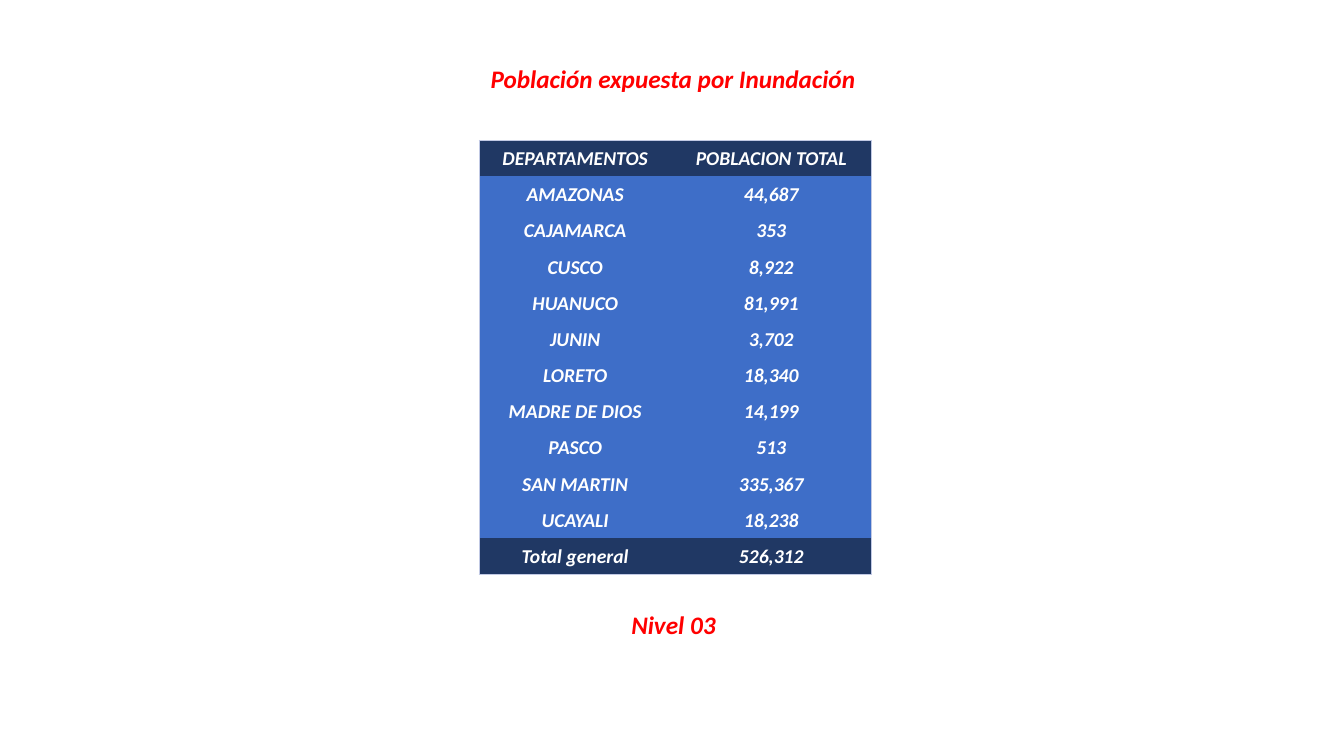
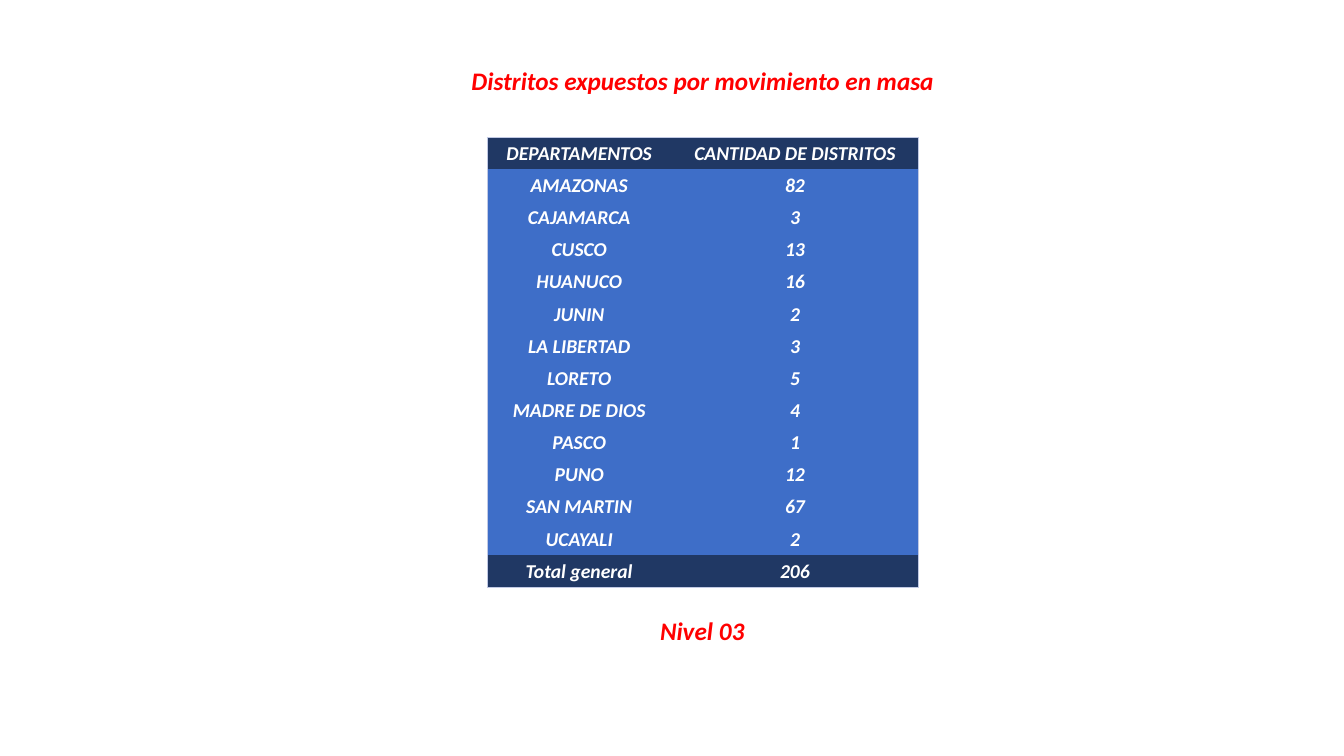
"""Builds two slides with exposure figures by department."""
from dataclasses import dataclass

from lxml import etree
from pptx import Presentation
from pptx.dml.color import RGBColor
from pptx.enum import text as txt
from pptx.oxml import ns
from pptx.util import Emu, Pt

EMU_PER_PX = 9144


@dataclass(frozen=True)
class Theme:
    font: str = "Calibri"
    heading: str = "FF0000"
    cell_text: str = "FFFFFF"
    band: str = "203864"
    body: str = "3E6EC8"
    border: str = "C1C9E4"
    heading_pt: int = 18
    cell_pt: int = 14
    border_pt: float = 0.5


@dataclass(frozen=True)
class Box:
    left: int
    top: int
    width: int
    height: int


@dataclass(frozen=True)
class Report:
    title: str
    title_box: Box
    level_box: Box
    table_top_left: tuple[int, int]
    column_widths: tuple[int, int]
    table_height: int
    measure: str
    departments: tuple[tuple[str, str], ...]
    total: str


THEME = Theme()
LEVEL = "Nivel 03"

REPORTS = (
    Report(
        "Población expuesta por Inundación",
        Box(475, 58, 385, 40), Box(613, 600, 110, 40),
        (475, 139), (191, 198), 431, "POBLACION TOTAL",
        (
            ("AMAZONAS", "44,687"), ("CAJAMARCA", "353"), ("CUSCO", "8,922"),
            ("HUANUCO", "81,991"), ("JUNIN", "3,702"), ("LORETO", "18,340"),
            ("MADRE DE DIOS", "14,199"), ("PASCO", "513"),
            ("SAN MARTIN", "335,367"), ("UCAYALI", "18,238"),
        ),
        "526,312",
    ),
    Report(
        "Distritos expuestos por movimiento en masa",
        Box(455, 60, 484, 40), Box(613, 606, 167, 40),
        (483, 136), (183, 245), 447, "CANTIDAD DE DISTRITOS",
        (
            ("AMAZONAS", "82"), ("CAJAMARCA", "3"), ("CUSCO", "13"),
            ("HUANUCO", "16"), ("JUNIN", "2"), ("LA LIBERTAD", "3"),
            ("LORETO", "5"), ("MADRE DE DIOS", "4"), ("PASCO", "1"),
            ("PUNO", "12"), ("SAN MARTIN", "67"), ("UCAYALI", "2"),
        ),
        "206",
    ),
)


def px(length: int) -> Emu:
    """Turn whole pixels into EMU."""
    return Emu(length * EMU_PER_PX)


def write(frame, wording: str, *, size: int, color: str) -> None:
    """Put one centred bold italic line into a text frame."""
    paragraph = frame.paragraphs[0]
    paragraph.alignment = txt.PP_ALIGN.CENTER
    run = paragraph.add_run()
    run.text = wording
    run.font.name = THEME.font
    run.font.size = Pt(size)
    run.font.bold = run.font.italic = True
    run.font.color.rgb = RGBColor.from_string(color)


def add_heading(slide, wording: str, box: Box, *, wrap: bool) -> None:
    """Add a red heading."""
    heading = slide.shapes.add_textbox(
        px(box.left), px(box.top), px(box.width), px(box.height))
    frame = heading.text_frame
    frame.word_wrap = wrap
    frame.auto_size = txt.MSO_AUTO_SIZE.SHAPE_TO_FIT_TEXT
    write(frame, wording, size=THEME.heading_pt, color=THEME.heading)


def set_borders(cell, outer: dict[str, bool]) -> None:
    """Draw the outer edges of a cell and clear its inner ones."""
    properties = cell._tc.get_or_add_tcPr()
    for edge, visible in outer.items():
        line = etree.SubElement(properties, ns.qn(f"a:ln{edge}"))
        line.set("w", str(int(Pt(THEME.border_pt))))
        if visible:
            fill = etree.SubElement(line, ns.qn("a:solidFill"))
            etree.SubElement(fill, ns.qn("a:srgbClr")).set("val", THEME.border)
        else:
            etree.SubElement(line, ns.qn("a:noFill"))


def add_department_table(slide, report: Report) -> None:
    """Add the department table with dark first and last rows."""
    rows = (("DEPARTAMENTOS", report.measure), *report.departments,
            ("Total general", report.total))
    left, top = report.table_top_left
    table = slide.shapes.add_table(
        len(rows), len(report.column_widths), px(left), px(top),
        px(sum(report.column_widths)), px(report.table_height)).table
    table.first_row = table.horz_banding = False
    for column, width in zip(table.columns, report.column_widths):
        column.width = px(width)

    last_row, last_column = len(rows) - 1, len(report.column_widths) - 1
    for r, row in enumerate(rows):
        for c, wording in enumerate(row):
            cell = table.cell(r, c)
            set_borders(cell, {"L": c == 0, "R": c == last_column,
                               "T": r == 0, "B": r == last_row})
            cell.fill.solid()
            cell.fill.fore_color.rgb = RGBColor.from_string(
                THEME.band if r in (0, last_row) else THEME.body)
            cell.margin_left = cell.margin_right = cell.margin_top = px(1)
            cell.margin_bottom = px(0)
            cell.vertical_anchor = txt.MSO_ANCHOR.MIDDLE
            write(cell.text_frame, wording,
                  size=THEME.cell_pt, color=THEME.cell_text)


def add_report(deck, report: Report) -> None:
    """Add one slide with its title, level and table."""
    slide = deck.slides.add_slide(deck.slide_layouts[6])
    add_heading(slide, report.title, report.title_box, wrap=False)
    add_heading(slide, LEVEL, report.level_box, wrap=True)
    add_department_table(slide, report)


def main() -> None:
    """Build and save the presentation."""
    deck = Presentation()
    deck.slide_width, deck.slide_height = px(1333), px(750)
    for report in REPORTS:
        add_report(deck, report)
    deck.save("out.pptx")


if __name__ == "__main__":
    main()
